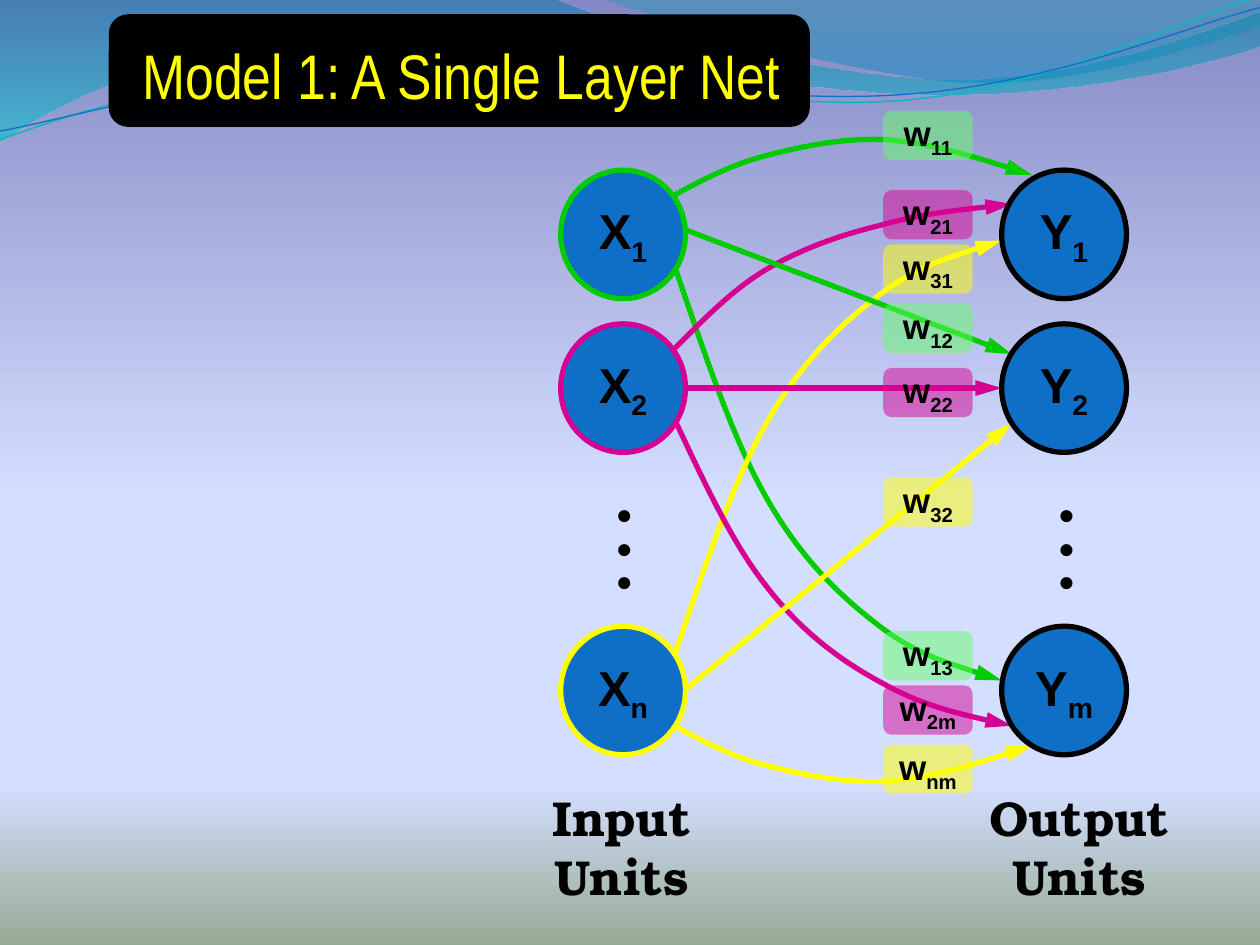
import pptx
import pptx.util
from lxml import etree
from pptx.dml.color import RGBColor
from pptx.enum.shapes import MSO_CONNECTOR, MSO_SHAPE
from pptx.enum.text import MSO_ANCHOR, MSO_AUTO_SIZE, PP_ALIGN
from pptx.oxml.ns import qn
from pptx.util import Cm

BLACK = RGBColor(0x00, 0x00, 0x00)
BLUE = RGBColor(0x0F, 0x6F, 0xC6)
TEAL = RGBColor(0x0A, 0xB8, 0xBF)
GREEN = RGBColor(0x00, 0xCC, 0x00)
LIGHT_GREEN = RGBColor(0x66, 0xFF, 0x66)
YELLOW = RGBColor(0xFF, 0xFF, 0x00)
MAGENTA = RGBColor(0xD6, 0x00, 0x93)

# Positions are in inches; emu() turns them into lengths.
TITLE = "Model 1: A Single Layer Net"

# Gradient stops: position %, colour, opacity %
BACKGROUND = [(0, "8488C4", 100), (53, "D4DEFF", 100), (83, "D4DEFF", 100), (100, "96AB94", 100)]

# Outlines: a start point, then segments of one point (line) or three (curve)
WAVES = [
    ([(0, "0074A1", 45), (100, "00C6CF", 55)], (0, 0), [
        [(4.4, -0.01)],
        [(4.76, 0.17), (6.64, 0.63), (7.58, 0.63)],
        [(8.53, 0.63), (9.58, 0.26), (10, 0.09)],
        [(10.01, 0.36)],
        [(9.83, 0.44), (8.7, 0.76), (7.46, 0.75)],
        [(6.22, 0.75), (3.82, 0.28), (2.57, 0.34)],
        [(1.29, 0.36), (0.46, 0.83), (-0.01, 1.13)]]),
    ([(0, "00A1A9", 30), (80, "008BBF", 45)], (4.79, -0.01), [
        [(5.09, 0.11), (6.82, 0.62), (7.69, 0.65)],
        [(8.56, 0.69), (9.61, 0.32), (10, 0.21)],
        [(10, 0)]]),
]
RIPPLES = [
    (TEAL, 0.85, (0, 1.11), [
        [(0.48, 0.93), (1.58, 0.57), (2.77, 0.52)],
        [(3.95, 0.47), (5.93, 0.89), (7.13, 0.8)],
        [(8.33, 0.71), (9.38, 0.15), (9.98, -0.02)]]),
    (BLUE, 0.75, (0, 1.04), [
        [(0.47, 0.96), (1.64, 0.61), (2.83, 0.56)],
        [(4.03, 0.51), (5.97, 0.84), (7.17, 0.75)],
        [(8.36, 0.67), (9.41, 0.21), (10, 0.06)]]),
]

# Curved weights; the yellow ones mirror the green ones
OUTER_CURVE = ((5.35, 1.55), [
    [(5.59, 1.42), (5.82, 1.3), (6.1, 1.23)],
    [(6.38, 1.16), (6.7, 1.09), (7.05, 1.11)],
    [(7.39, 1.14), (7.79, 1.26), (8.19, 1.39)]])
CROSSING_CURVE = ((5.35, 2.1), [
    [(5.58, 2.77), (5.8, 3.44), (6.06, 3.91)],
    [(6.32, 4.38), (6.61, 4.68), (6.93, 4.93)],
    [(7.24, 5.18), (7.6, 5.29), (7.95, 5.4)]])
MAGENTA_CURVES = [
    ((5.35, 3.32), [
        [(5.58, 3.81), (5.81, 4.31), (6.08, 4.65)],
        [(6.35, 5), (6.65, 5.23), (6.98, 5.41)],
        [(7.3, 5.59), (7.66, 5.68), (8.03, 5.76)]]),
    ((5.35, 2.77), [
        [(5.58, 2.54), (5.81, 2.3), (6.08, 2.14)],
        [(6.35, 1.98), (6.65, 1.87), (6.98, 1.79)],
        [(7.3, 1.7), (7.66, 1.66), (8.03, 1.62)]]),
]
MIRROR_SUM = 7.31
STRAIGHT_WEIGHTS = [
    (GREEN, (5.43, 1.82), (8.03, 2.81)),
    (YELLOW, (5.43, 5.48), (8.03, 3.36)),
    (MAGENTA, (5.43, 3.08), (7.95, 3.08)),
]

UNIT_TOPS = [1.35, 2.57, 4.97]
# Left of circles, units, outlines, left of dots, caption and its left
LAYERS = [
    (4.45, ["X_1", "X_2", "X_n"], [GREEN, MAGENTA, YELLOW], 4.72, ["Input", "Units"], 4.17),
    (7.95, ["Y_1", "Y_2", "Y_m"], [BLACK] * 3, 8.23, ["Output", "Units"], 7.8),
]
WEIGHT_LABELS = [
    ("w_11", 0.88, LIGHT_GREEN), ("w_21", 1.51, MAGENTA), ("w_31", 1.94, YELLOW),
    ("w_12", 2.41, LIGHT_GREEN), ("w_22", 2.92, MAGENTA), ("w_32", 3.79, YELLOW),
    ("w_13", 5.01, LIGHT_GREEN), ("w_2m", 5.44, MAGENTA), ("w_nm", 5.91, YELLOW),
]


def emu(inches):
    return Cm(inches * 2.54)


def box(*inches):
    return [emu(value) for value in inches]


def write_text(shape, lines, size=28, font="Arial", color=BLACK, bold=True, anchor=MSO_ANCHOR.MIDDLE):
    """Write centred lines; whatever follows an underscore is a subscript."""
    frame = shape.text_frame
    frame.word_wrap = False
    frame.auto_size = MSO_AUTO_SIZE.NONE
    frame.vertical_anchor = anchor
    for index, line in enumerate(lines):
        paragraph = frame.add_paragraph() if index else frame.paragraphs[0]
        paragraph.alignment = PP_ALIGN.CENTER
        for level, part in enumerate(line.split("_")):
            run = paragraph.add_run()
            run.text = part
            run.font.size = pptx.util.Pt(size)
            run.font.name = font
            run.font.bold = bold
            run.font.color.rgb = color
            if level:
                run.font._element.set("baseline", "-25000")


def set_gradient(fill, element, stops):
    fill.gradient()
    fill.gradient_angle = 270
    stop_list = element.find(".//" + qn("a:gsLst"))
    for child in list(stop_list):
        stop_list.remove(child)
    for position, color, opacity in stops:
        stop = etree.SubElement(stop_list, qn("a:gs"), pos=str(position * 1000))
        color_element = etree.SubElement(stop, qn("a:srgbClr"), val=color)
        etree.SubElement(color_element, qn("a:alpha"), val=str(opacity * 1000))


def set_line(shape, color, width, arrow=False):
    shape.line.color.rgb = color
    shape.line.width = pptx.util.Pt(width)
    if arrow:
        line = shape.element.find(".//" + qn("a:ln"))
        etree.SubElement(line, qn("a:tailEnd"), type="triangle", w="med", len="lg")


def add_outline(slide, start, segments, close=False):
    """Build a freeform, then turn each run of three points into a curve."""
    builder = slide.shapes.build_freeform(emu(start[0]), emu(start[1]))
    points = [point for segment in segments for point in segment]
    builder.add_line_segments([box(*point) for point in points], close=close)
    shape = builder.convert_to_shape()
    shape.shadow.inherit = False
    steps = iter(shape.element.findall(".//" + qn("a:lnTo")))
    for segment in segments:
        first, *others = [next(steps) for _ in segment]
        if others:
            first.tag = qn("a:cubicBezTo")
            for other in others:
                first.append(other[0])
                other.getparent().remove(other)
    return shape


def add_curve(slide, color, width, start, segments, arrow=False):
    curve = add_outline(slide, start, segments)
    curve.fill.background()
    set_line(curve, color, width, arrow)


def mirrored(start, segments):
    def flip(point):
        return point[0], MIRROR_SUM - point[1]
    return flip(start), [[flip(point) for point in segment] for segment in segments]


def add_filled(slide, kind, bounds, color):
    shape = slide.shapes.add_shape(kind, *box(*bounds))
    shape.shadow.inherit = False
    shape.fill.solid()
    shape.fill.fore_color.rgb = color
    return shape


def draw_backdrop(slide):
    set_gradient(slide.background.fill, slide.element, BACKGROUND)
    for stops, start, segments in WAVES:
        wave = add_outline(slide, start, segments, close=True)
        set_gradient(wave.fill, wave.element, stops)
        wave.line.fill.background()
    for ripple in RIPPLES:
        add_curve(slide, *ripple)


def draw_weights(slide):
    curves = [(color, curve) for color, curves in (
        (GREEN, [OUTER_CURVE, CROSSING_CURVE]),
        (YELLOW, [mirrored(*OUTER_CURVE), mirrored(*CROSSING_CURVE)]),
        (MAGENTA, MAGENTA_CURVES)) for curve in curves]
    for color, (start, segments) in curves:
        add_curve(slide, color, 3, start, segments, arrow=True)
    for color, start, end in STRAIGHT_WEIGHTS:
        connector = slide.shapes.add_connector(MSO_CONNECTOR.STRAIGHT, *box(*start, *end))
        set_line(connector, color, 3, arrow=True)
        etree.SubElement(connector.element.spPr, qn("a:effectLst"))


def draw_layers(slide):
    for left, units, outlines, dots_left, caption, caption_left in LAYERS:
        for unit, top, outline in zip(units, UNIT_TOPS, outlines):
            circle = add_filled(slide, MSO_SHAPE.OVAL, (left, top, 0.99, 1.02), BLUE)
            set_line(circle, outline, 3)
            write_text(circle, [unit])
        dots = slide.shapes.add_textbox(*box(dots_left, 3.83, 0.47, 1.02))
        write_text(dots, ["●"] * 3, size=16, bold=False)
        caption_box = slide.shapes.add_textbox(*box(caption_left, 6.19, 1.53, 1.06))
        write_text(caption_box, caption, font="TeX Gyre Bonum")


def draw_title(slide):
    panel = add_filled(slide, MSO_SHAPE.ROUNDED_RECTANGLE, (0.87, 0.12, 5.55, 0.88), BLACK)
    set_line(panel, BLACK, 1)
    title = slide.shapes.title
    title.left, title.top, title.width, title.height = box(1.02, 0.24, 5.28, 0.62)
    write_text(title, [TITLE], size=36, font="Arial Narrow", color=YELLOW, bold=False, anchor=MSO_ANCHOR.TOP)
    panel.element.addnext(title.element)


def draw_weight_labels(slide):
    for text, top, color in WEIGHT_LABELS:
        label = add_filled(slide, MSO_SHAPE.ROUNDED_RECTANGLE, (7.01, top, 0.71, 0.39), color)
        label.line.fill.background()
        fill_color = label.element.spPr.find(qn("a:solidFill"))[0]
        etree.SubElement(fill_color, qn("a:alpha"), val="50000")
        write_text(label, [text], size=20)


def main():
    presentation = pptx.Presentation()
    presentation.slide_width, presentation.slide_height = box(10, 7.5)
    slide = presentation.slides.add_slide(presentation.slide_layouts[5])
    for draw in (draw_backdrop, draw_weights, draw_layers, draw_title, draw_weight_labels):
        draw(slide)
    presentation.save("out.pptx")


if __name__ == "__main__":
    main()
